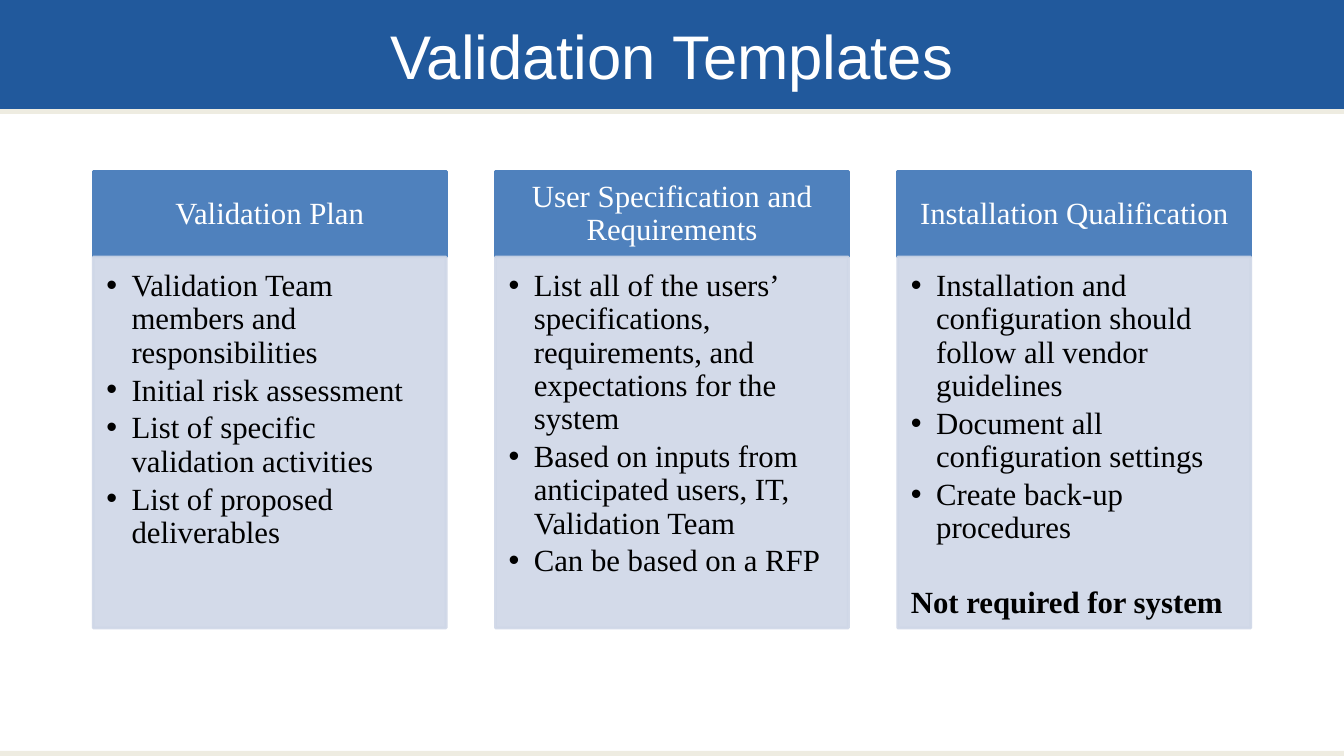
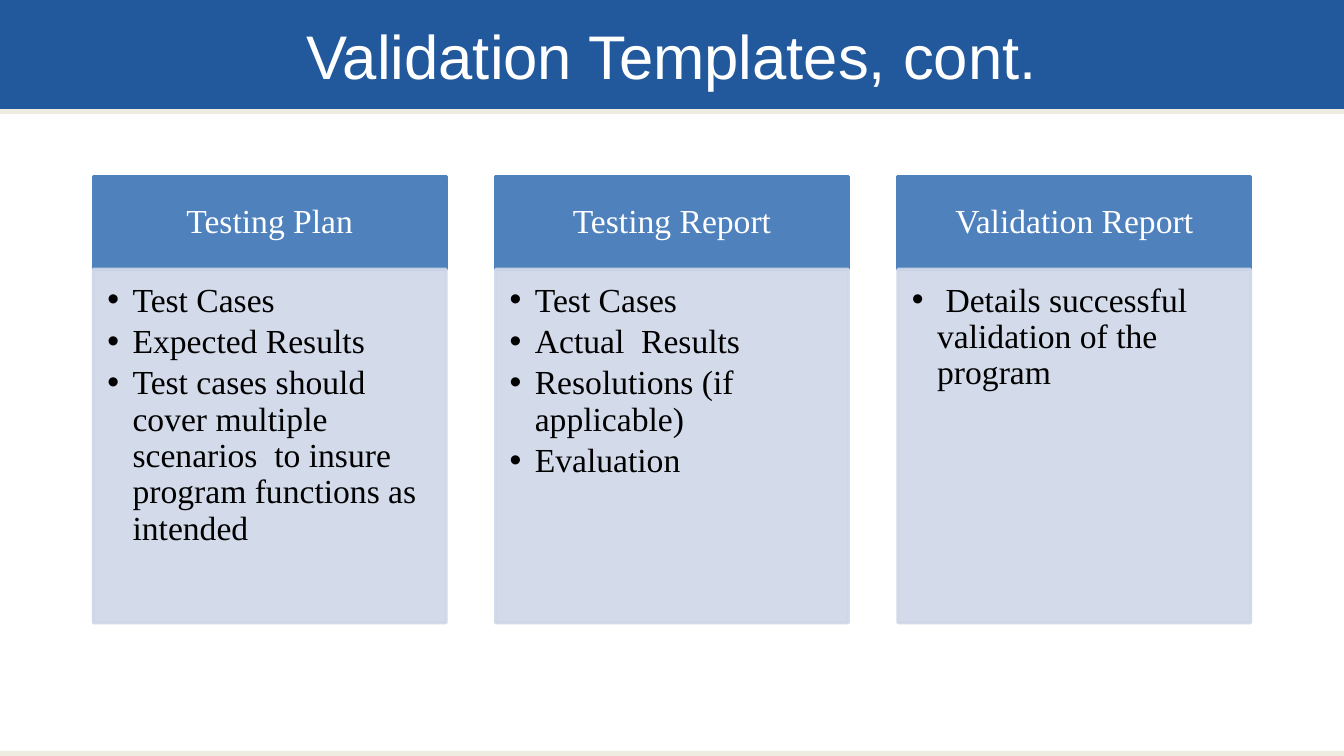
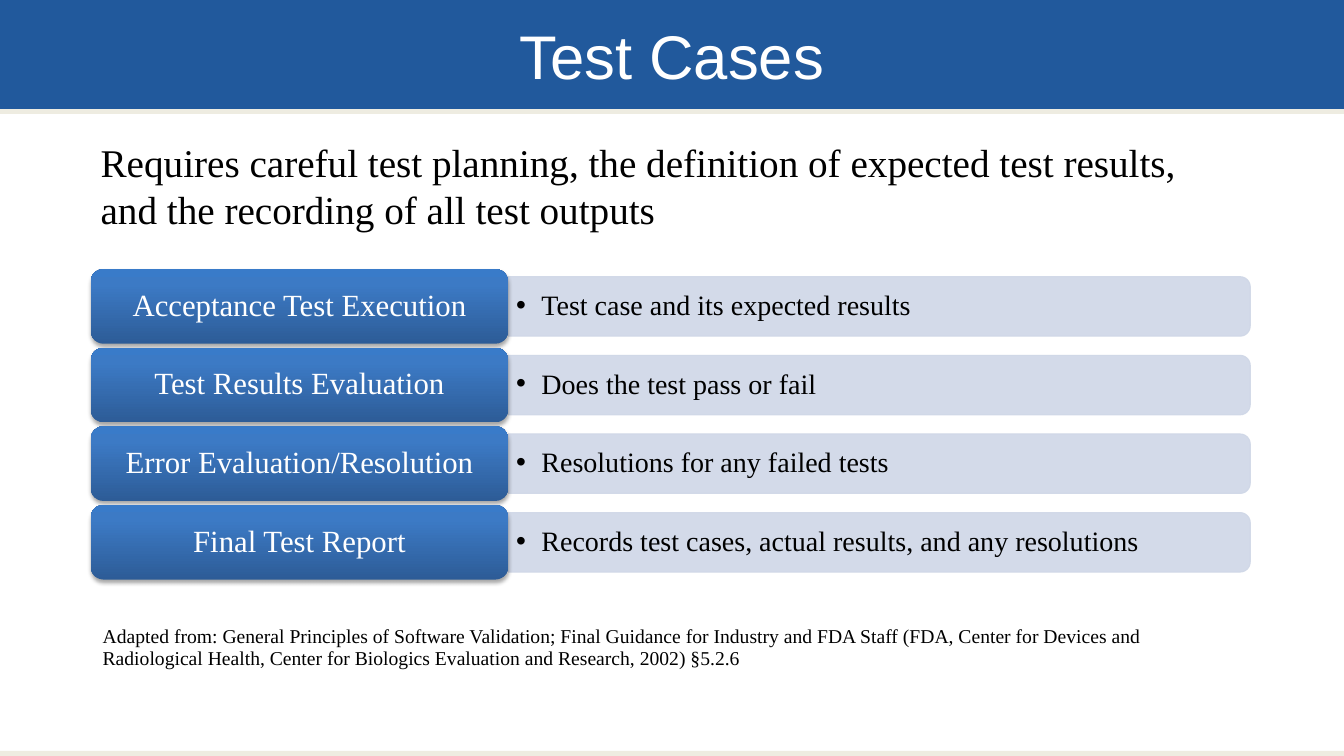
from copy import deepcopy

from lxml import etree
from pptx import Presentation
from pptx.dml.color import RGBColor
from pptx.enum.shapes import MSO_SHAPE
from pptx.enum.text import MSO_ANCHOR, PP_ALIGN
from pptx.oxml.ns import qn
from pptx.util import Inches, Pt

RECTANGLE = MSO_SHAPE.RECTANGLE
ROUNDED = MSO_SHAPE.ROUNDED_RECTANGLE
ROUNDED_TOP = MSO_SHAPE.ROUND_2_SAME_RECTANGLE
TOP, MIDDLE = MSO_ANCHOR.TOP, MSO_ANCHOR.MIDDLE
LEFT, CENTER = PP_ALIGN.LEFT, PP_ALIGN.CENTER

WIDTH, HEIGHT = 13.33, 7.5
TITLE_HEIGHT, RULE_HEIGHT = 1.08, 0.05
COLUMN_WIDTH, COLUMN_GAP = 3.5, 0.49
ROW_TOP, ROW_PITCH = 2.67, 0.78
TILE_LEFT, TILE_WIDTH, TILE_HEIGHT = 0.9, 4.14, 0.74
BAR_WIDTH, BAR_HEIGHT = 7.36, 0.59

TITLE_BLUE, CREAM, HEADING_BLUE, PALE_BLUE = "21599C", "EEECE1", "4F81BD", "CFD7E7"
WHITE, BLACK = "FFFFFF", "000000"
TILE_GRADIENT = [(0, "2D5C97"), (0.8, "3C7AC5"), (1, "397BC9")]
TITLE_FONT, BODY_FONT = "Arial", "Times New Roman"

COLUMN_SLIDES = [
    {
        "title": "Validation Templates",
        "top": 1.7, "heading_height": 0.85, "body_height": 3.68, "size": 22,
        "heading_insets": (0.17, 0.1, 0.17, 0.1), "body_insets": (0.13, 0.13, 0.17, 0.19),
        "columns": [
            ("Validation Plan", [
                "Validation Team members and responsibilities",
                "Initial risk assessment",
                "List of specific validation activities",
                "List of proposed deliverables",
            ], None),
            ("User Specification and Requirements", [
                "List all of the users’ specifications, requirements, and expectations for the system",
                "Based on inputs from anticipated users, IT, Validation Team",
                "Can be based on a RFP",
            ], None),
            ("Installation Qualification", [
                "Installation and configuration should follow all vendor guidelines",
                "Document all configuration settings",
                "Create back-up procedures",
            ], "Not required for system"),
        ],
    },
    {
        "title": "Validation Templates, cont.",
        "top": 1.75, "heading_height": 0.92, "body_height": 3.51, "size": 24,
        "heading_insets": (0.19, 0.11, 0.19, 0.11), "body_insets": (0.14, 0.14, 0.19, 0.21),
        "columns": [
            ("Testing Plan", [
                "Test Cases",
                "Expected Results",
                "Test cases should cover multiple scenarios  to insure program functions as intended",
            ], None),
            ("Testing Report", [
                "Test Cases",
                "Actual  Results",
                "Resolutions (if applicable)",
                "Evaluation",
            ], None),
            ("Validation Report", [" Details successful validation of the program"], None),
        ],
    },
]

TEST_TITLE = "Test Cases"
TEST_INTRO = ("Requires careful test planning, the definition of expected test results, "
              "and the recording of all test outputs")
TEST_ROWS = [
    ("Acceptance Test Execution", "Test case and its expected results"),
    ("Test Results Evaluation", "Does the test pass or fail"),
    ("Error Evaluation/Resolution", "Resolutions for any failed tests"),
    ("Final Test Report", "Records test cases, actual results, and any resolutions"),
]
TEST_SOURCE = ("Adapted from: General Principles of Software Validation; Final Guidance for "
               "Industry and FDA Staff (FDA, Center for Devices and Radiological Health, "
               "Center for Biologics Evaluation and Research, 2002) §5.2.6")


def rgb(value):
    return RGBColor.from_string(value)


def add_shape(slide, kind, box, fill=None, line=None, line_width=2, opacity=100):
    shape = slide.shapes.add_shape(kind, *map(Inches, box))
    shape.shadow.inherit = False
    if fill:
        shape.fill.solid()
        shape.fill.fore_color.rgb = rgb(fill)
    if line:
        shape.line.color.rgb = rgb(line)
        shape.line.width = Pt(line_width)
    else:
        shape.line.fill.background()
    if opacity < 100:
        for color in shape._element.spPr.iter(qn("a:srgbClr")):
            etree.SubElement(color, qn("a:alpha"), val=str(opacity * 1000))
    return shape


def prepare_frame(shape, insets=(0.1, 0.05, 0.1, 0.05), anchor=TOP):
    frame = shape.text_frame
    frame.word_wrap = True
    frame.vertical_anchor = anchor
    (frame.margin_left, frame.margin_top,
     frame.margin_right, frame.margin_bottom) = map(Inches, insets)
    return frame


def add_bullet(paragraph):
    properties = paragraph._p.get_or_add_pPr()
    properties.set("marL", str(Inches(0.25)))
    properties.set("indent", str(-Inches(0.25)))
    color = etree.SubElement(properties, qn("a:buClr"))
    etree.SubElement(color, qn("a:srgbClr"), val=BLACK)
    etree.SubElement(properties, qn("a:buFont"), typeface=TITLE_FONT)
    etree.SubElement(properties, qn("a:buChar"), char="•")


def write(frame, text, size, color=BLACK, font=BODY_FONT, align=LEFT,
          bold=False, bullet=False, spacing=0.9, before=0):
    first = frame.paragraphs[0]
    paragraph = frame.add_paragraph() if first.runs else first
    if bullet:
        add_bullet(paragraph)
    paragraph.alignment = align
    paragraph.line_spacing = spacing
    paragraph.space_before = Pt(before)
    run = paragraph.add_run()
    run.text = text
    run.font.name = font
    run.font.size = Pt(size)
    run.font.bold = bold
    run.font.color.rgb = rgb(color)


def add_text_box(slide, box, text, size, insets=(0.1, 0.05, 0.1, 0.05), anchor=TOP, **style):
    text_box = slide.shapes.add_textbox(*map(Inches, box))
    write(prepare_frame(text_box, insets, anchor), text, size, **style)


def start_slide(presentation, title):
    slide = presentation.slides.add_slide(presentation.slide_layouts[6])
    for top in (TITLE_HEIGHT, HEIGHT - RULE_HEIGHT):
        add_shape(slide, RECTANGLE, (0, top, WIDTH, RULE_HEIGHT), CREAM)
    band = add_shape(slide, RECTANGLE, (0, 0, WIDTH, TITLE_HEIGHT), TITLE_BLUE)
    write(prepare_frame(band, anchor=MIDDLE), title, 44, color=WHITE, font=TITLE_FONT,
          align=CENTER, spacing=1.0)
    return slide


def add_column(slide, left, content, heading, items, note):
    top, heading_height, size = content["top"], content["heading_height"], content["size"]
    header = add_shape(slide, RECTANGLE, (left, top, COLUMN_WIDTH, heading_height),
                       HEADING_BLUE, HEADING_BLUE)
    write(prepare_frame(header, content["heading_insets"], MIDDLE), heading, size,
          color=WHITE, align=CENTER)
    body = add_shape(slide, RECTANGLE,
                     (left, top + heading_height, COLUMN_WIDTH, content["body_height"]),
                     PALE_BLUE, PALE_BLUE, opacity=90)
    frame = prepare_frame(body, content["body_insets"])
    for index, item in enumerate(items):
        write(frame, item, size, bullet=True, before=size * 0.15 if index else 0)
    if note:
        write(frame, note, size, bold=True, before=30)


def build_column_slide(presentation, content):
    slide = start_slide(presentation, content["title"])
    count = len(content["columns"])
    left = (WIDTH - count * COLUMN_WIDTH - (count - 1) * COLUMN_GAP) / 2
    for index, column in enumerate(content["columns"]):
        add_column(slide, left + index * (COLUMN_WIDTH + COLUMN_GAP), content, *column)


def style_tile(tile):
    tile.fill.gradient()
    tile.fill.gradient_angle = 90
    properties = tile._element.spPr
    stops = next(properties.iter(qn("a:gsLst")))
    stops.append(deepcopy(stops[-1]))
    for stop, (position, color) in zip(tile.fill.gradient_stops, TILE_GRADIENT):
        stop.position = position
        stop.color.rgb = rgb(color)
    shadow = etree.SubElement(properties.find(qn("a:effectLst")), qn("a:outerShdw"),
                              blurRad=str(Pt(3.1)), dist=str(Pt(1.8)),
                              dir="5400000", rotWithShape="0")
    shadow_color = etree.SubElement(shadow, qn("a:srgbClr"), val=BLACK)
    etree.SubElement(shadow_color, qn("a:alpha"), val="35000")


def add_row(slide, top, name, detail):
    middle = top + TILE_HEIGHT / 2
    bar_left = TILE_LEFT + TILE_WIDTH
    bar = add_shape(slide, ROUNDED_TOP,
                    (bar_left + (BAR_WIDTH - BAR_HEIGHT) / 2, middle - BAR_WIDTH / 2,
                     BAR_HEIGHT, BAR_WIDTH),
                    PALE_BLUE, PALE_BLUE, line_width=0.75, opacity=90)
    bar.rotation = 90
    bar.adjustments[0] = 0.17
    add_text_box(slide, (bar_left, middle - 0.27, 7.33, 0.54), detail, 20,
                 insets=(0.08, 0.04, 0.08, 0.04), anchor=MIDDLE, bullet=True)
    tile = add_shape(slide, ROUNDED, (TILE_LEFT, top, TILE_WIDTH, TILE_HEIGHT))
    tile.adjustments[0] = 0.17
    style_tile(tile)
    write(prepare_frame(tile, (0.13, 0.08, 0.13, 0.08), MIDDLE), name, 22,
          color=WHITE, align=CENTER)


def build_test_slide(presentation):
    slide = start_slide(presentation, TEST_TITLE)
    for index, row in enumerate(TEST_ROWS):
        add_row(slide, ROW_TOP + index * ROW_PITCH, *row)
    add_text_box(slide, (0.9, 1.32, 11.5, 1.35), TEST_INTRO, 28, spacing=1.0)
    add_text_box(slide, (0.92, 6.17, 11.5, 0.53), TEST_SOURCE, 14)


def main():
    presentation = Presentation()
    presentation.slide_width = Inches(WIDTH)
    presentation.slide_height = Inches(HEIGHT)
    for content in COLUMN_SLIDES:
        build_column_slide(presentation, content)
    build_test_slide(presentation)
    presentation.save("out.pptx")


if __name__ == "__main__":
    main()
